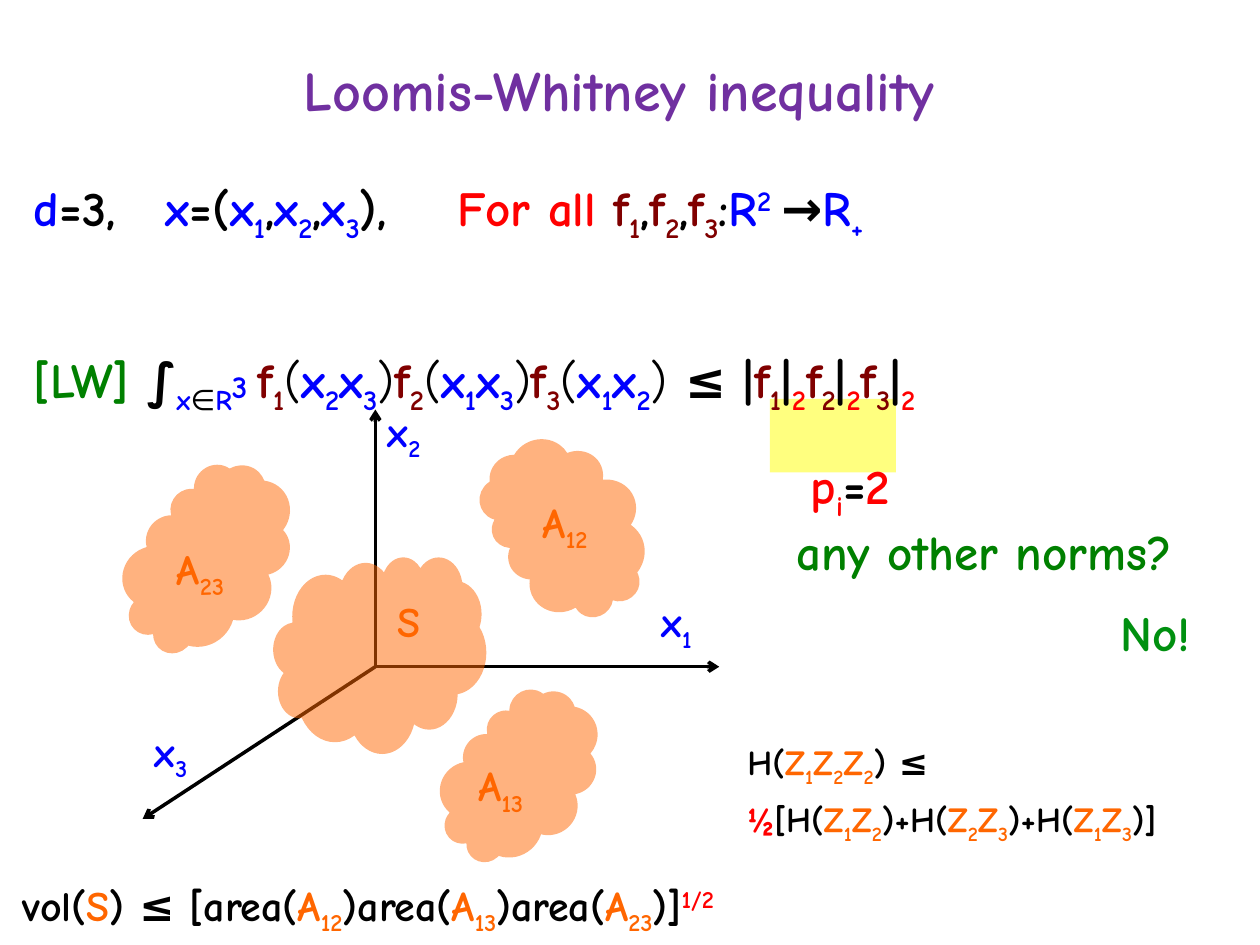
from lxml import etree
from pptx import Presentation
from pptx import util as u
from pptx.dml import color
from pptx.enum import shapes, text
from pptx.oxml import ns

Pt = u.Pt
FONT = "Comic Neue"
COLORS = {
    "black": "000000", "blue": "0000FF", "red": "FF0000", "maroon": "800000",
    "green": "008000", "lime": "009010", "orange": "FF6600",
    "purple": "7030A0", "yellow": "FFFF00",
}


def rgb(name):
    return color.RGBColor.from_string(COLORS[name])


def write(para, size, spans, line_spacing=1.0):
    """Each span is (colour, text, index, bold); an index after ^ is raised."""
    para.font.name, para.font.size, para.font.bold = FONT, Pt(size), True
    para.line_spacing = line_spacing
    for name, base, index, bold in [(*s, "", True)[:4] if len(s) == 2
                                    else (*s, True)[:4] for s in spans]:
        for piece, shift in ((base, 0), (index, 30 if index[:1] == "^" else -25)):
            if not piece:
                continue
            span = para.add_run()
            span.text = piece.lstrip("^")
            span.font.name, span.font.size = FONT, Pt(size)
            span.font.color.rgb = rgb(name)
            span.font.bold = bold
            if shift:
                span.font._element.set("baseline", str(shift * 1000))


deck = Presentation()
deck.slide_width, deck.slide_height = Pt(720), Pt(540)
page = deck.slides.add_slide(deck.slide_layouts[5])

# Title
title = page.shapes.title
title.left, title.top, title.width, title.height = Pt(21), Pt(-7), Pt(666), Pt(116)
title.text_frame.vertical_anchor = text.MSO_ANCHOR.MIDDLE
write(title.text_frame.paragraphs[0], 32, [("purple", "Loomis-Whitney inequality")])
title.text_frame.paragraphs[0].alignment = text.PP_ALIGN.CENTER

# Axes
for end_x, end_y in ((411, 381), (214.5, 234), (81.5, 468)):
    axis = page.shapes.add_connector(
        shapes.MSO_CONNECTOR.STRAIGHT, Pt(214.5), Pt(381), Pt(end_x), Pt(end_y))
    axis.line.color.rgb = rgb("black")
    axis.line.width = Pt(2)
    etree.SubElement(axis.line._get_or_add_ln(), ns.qn("a:tailEnd"), type="arrow")
    etree.SubElement(axis._element.spPr, ns.qn("a:effectLst"))

# Highlight, projections and the solid, all half transparent
CLOUD = shapes.MSO_SHAPE.CLOUD
for kind, name, left, top, width, height, turn in (
        (shapes.MSO_SHAPE.RECTANGLE, "yellow", 440, 228, 72, 42, 0),
        (CLOUD, "orange", 270.7, 260, 107.3, 82.8, 247),
        (CLOUD, "orange", 244.8, 406.8, 106.6, 76.3, 318.7),
        (CLOUD, "orange", 62, 280, 116, 81.4, 316),
        (CLOUD, "orange", 156.2, 318.2, 121.7, 112.3, 0)):
    area = page.shapes.add_shape(kind, Pt(left), Pt(top), Pt(width), Pt(height))
    area.shadow.inherit = False
    area.rotation = turn
    area.fill.solid()
    area.fill.fore_color.rgb = rgb(name)
    area.line.fill.background()
    solid = area._element.spPr.find(ns.qn("a:solidFill"))
    etree.SubElement(solid[0], ns.qn("a:alpha"), val="50000")

# Formulas: spans by line
setting = [("blue", "d"), ("black", "=3,\t"), ("blue", "x"), ("black", "=(")]
for i in "123":
    setting += [("blue", "x", i), ("black", "," if i < "3" else "),\t")]
setting += [("red", "For all ")]
for i in "123":
    setting += [("maroon", "f", i), ("black", "," if i < "3" else ":")]
setting += [("blue", "R", "^2 "), ("black", "→"), ("blue", "R", "+")]

inequality = [("green", "[LW] "), ("black", "∫"), ("blue", "", "x"),
              ("black", "", "∈", False), ("blue", "", "R"), ("blue", "3"),
              ("blue", "", " ")]
exponent = 5
for i, j, k in ("123", "213", "312"):
    inequality += [("maroon", "f", i), ("black", "(", "", False),
                   ("blue", "x", j), ("blue", "x", k), ("black", ")", "", False)]
inequality += [("black", " ≤ ")]
for i in "123":
    inequality += [("black", "|"), ("maroon", "f", i), ("black", "|"), ("red", "", "2")]
# Neighbouring norms share one bar
inequality = [s for n, s in enumerate(inequality)
              if not (s == ("black", "|") and inequality[n - 1] == ("red", "", "2"))]

volume = [("black", "vol("), ("orange", "S"), ("black", ") ≤ [")]
for pair in ("12", "13", "23"):
    volume += [("black", "area("), ("orange", "A", pair), ("black", ")")]
volume += [("black", "]"), ("red", "", "^1/2")]

entropy = [("black", "H(")] + [("orange", "Z", i) for i in "122"] + [("black", ") ≤")]
bound = [("red", "½"), ("black", "[")]
for i, j in ("12", "23", "13"):
    bound += [("black", "H("), ("orange", "Z", i), ("orange", "Z", j),
              ("black", ")]" if i + j == "13" else ")+")]

# Text boxes: left, top, width, height, size, rotation, lines of (spacing, before, spans)
boxes = [
    (12.2, 90, 696, 299, 28, 0, [
        (1.2, 0, setting), (1.4, 45, inequality),
        (1.4, 7, [("red", "p", "i"), ("black", "="), ("red", "2")])]),
    (420, 414, 300, 65, 20, 0, [(1.2, 0, entropy), (1.2, 0, bound)]),
    (6, 499, 486, 36, 24, 0, [(1, 0, volume)]),
    (448, 288, 254, 47, 28, 0, [(1.2, 0, [("green", "any other norms?")])]),
    (633, 341, 59, 41, 28, 0, [(1, 0, [("lime", "No!")])]),
]
for name, base, index, left, top, width, turn in (
        ("blue", "x", "1", 371, 337, 37.4, 0), ("blue", "x", "2", 214.5, 228, 37.4, 0),
        ("blue", "x", "3", 81.4, 411, 37.4, 0), ("orange", "A", "12", 303, 280, 50.4, 0),
        ("orange", "A", "13", 266.4, 430.6, 50.4, 0),
        ("orange", "A", "23", 93.6, 306.7, 50.4, 358), ("orange", "S", "", 220.3, 337, 30.2, 0)):
    boxes.append((left, top, width, 38, 24, turn, [(1, 0, [(name, base, index)])]))

for left, top, width, height, size, turn, lines in boxes:
    box = page.shapes.add_textbox(Pt(left), Pt(top), Pt(width), Pt(height))
    box.rotation = turn
    box.text_frame.word_wrap = True
    for n, (spacing, before, spans) in enumerate(lines):
        para = box.text_frame.paragraphs[0] if n == 0 else box.text_frame.add_paragraph()
        if spans is setting:
            stops = etree.SubElement(para._p.get_or_add_pPr(), ns.qn("a:tabLst"))
            for stop in (75.5, 242):
                etree.SubElement(stops, ns.qn("a:tab"), pos=str(Pt(stop)), algn="l")
        write(para, size, spans, spacing)
        if before:
            para.space_before = Pt(before)
        if spans is inequality:
            para.runs[5].font.size = Pt(18)
        if spans[0][:2] == ("red", "p"):
            para._p.get_or_add_pPr().set("marL", str(Pt(444)))
            para._p.get_or_add_pPr().set("indent", "0")

deck.save("out.pptx")
